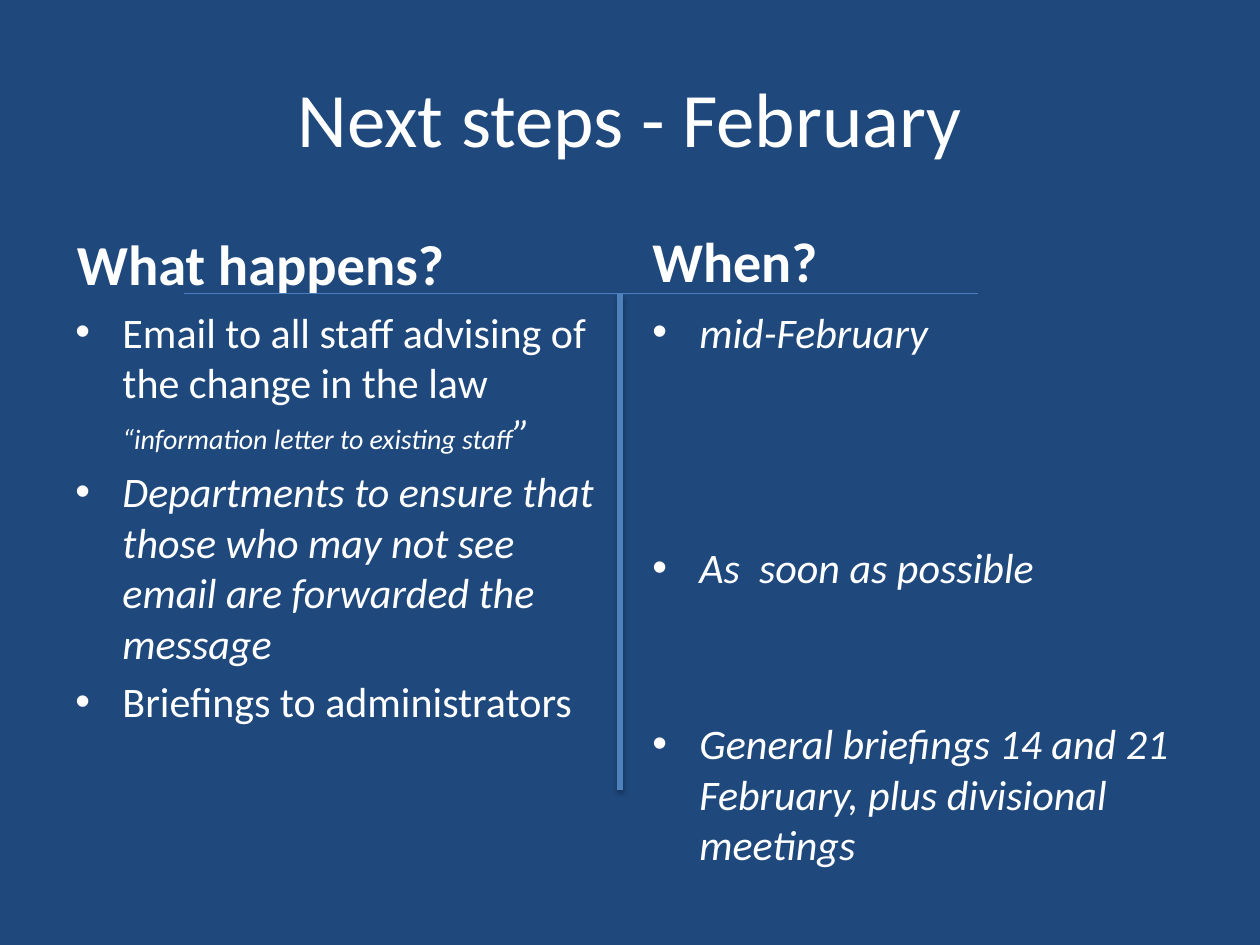
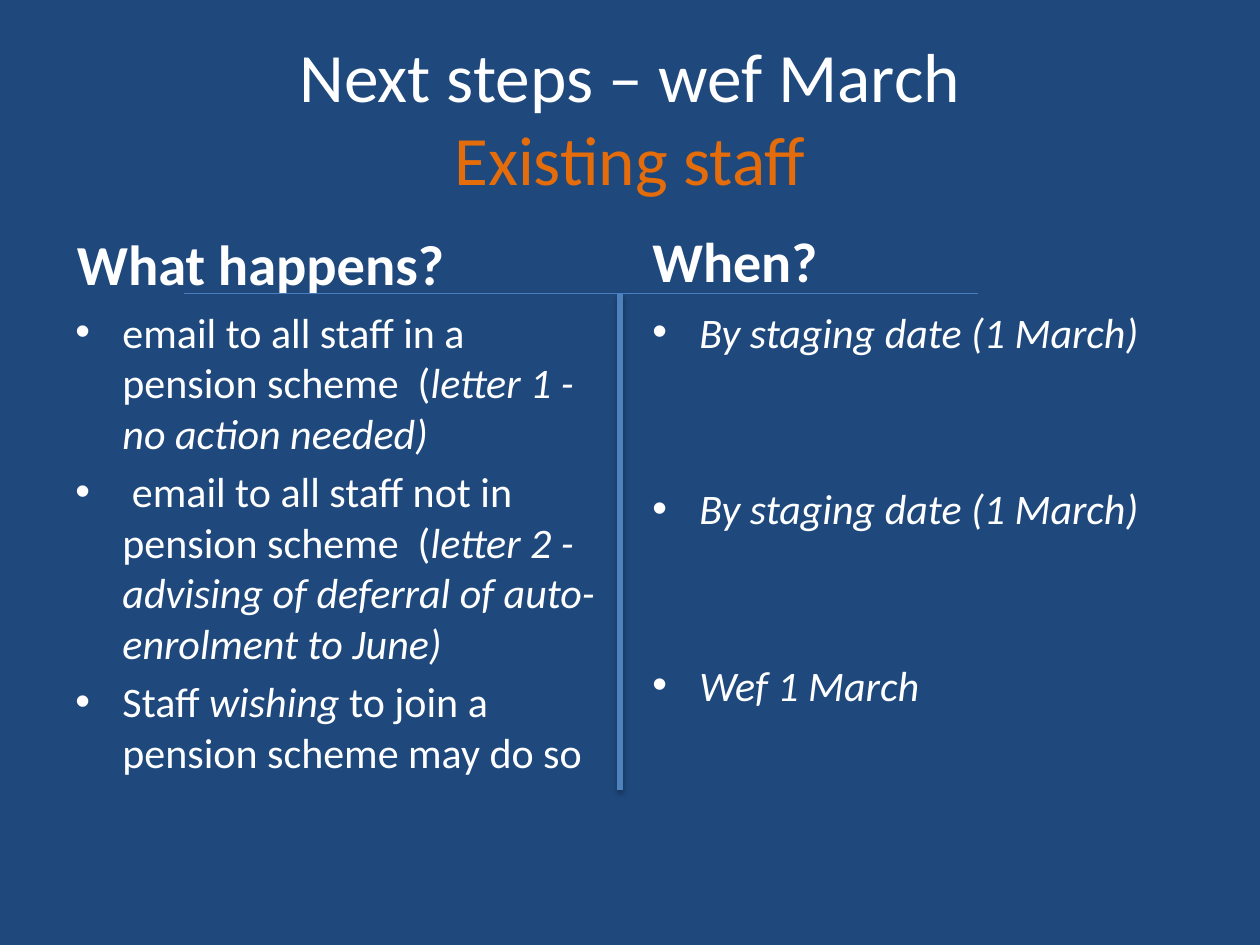
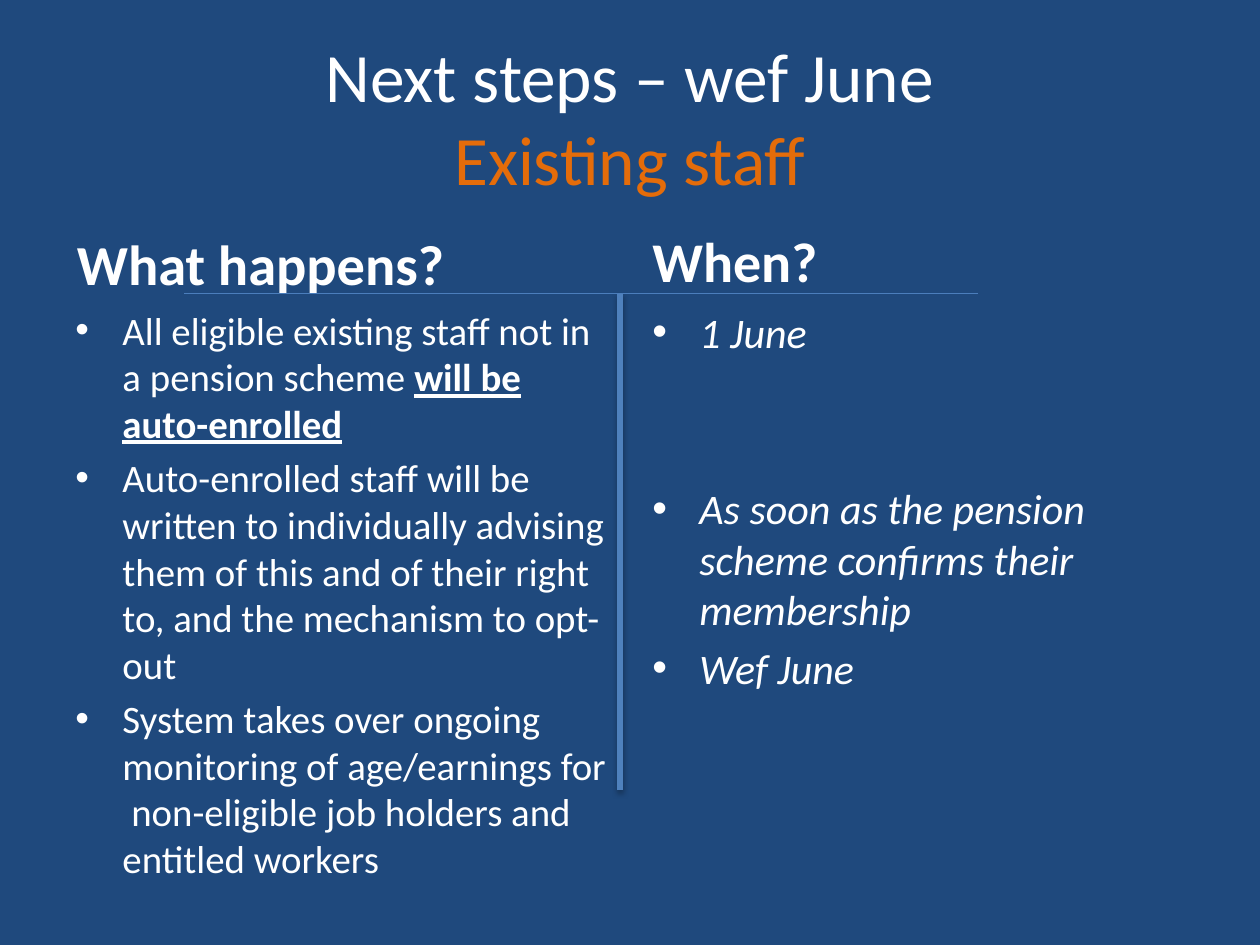
from dataclasses import dataclass

from lxml import etree
from pptx import Presentation
from pptx.dml.color import RGBColor
from pptx.enum.shapes import MSO_CONNECTOR as Connector
from pptx.enum.text import MSO_ANCHOR as Anchor, PP_ALIGN as Align
from pptx.oxml.ns import qn
from pptx.util import Cm, Pt

FONT = "Calibri"
NAVY, WHITE, ORANGE = "1F497D", "FFFFFF", "E46C0A"
DIVIDER_BLUE, RULE_BLUE = "4F81BD", "4B7EBC"
LEFT, RIGHT, COLUMN_WIDTH = 1.27, 12.9, 11.23
LIST_TOP, LIST_HEIGHT = 6.05, 10.97
RULE_TOP = 5.92
INDENT = Cm(0.95)
BODY_SIZE = 24
SPACING = 0.2  # space before a paragraph, as a share of the text size
LINE_HEIGHT = 1.2


@dataclass
class Run:
    text: str
    size: float = None
    color: str = WHITE
    bold: bool = False
    italic: bool = False
    underline: bool = False


@dataclass
class Item:
    """A list entry, set lower by a number of skipped lines."""
    runs: list
    skip: int = 0


def rgb(color):
    return RGBColor.from_string(color)


def add_run(paragraph, run, size):
    text_run = paragraph.add_run()
    text_run.text = run.text
    font = text_run.font
    font.name = FONT
    font.size = Pt(run.size or size)
    font.color.rgb = rgb(run.color)
    font.bold, font.italic, font.underline = run.bold, run.italic, run.underline


def add_text_frame(slide, left, top, width, height, anchor=Anchor.TOP):
    shape = slide.shapes.add_textbox(Cm(left), Cm(top), Cm(width), Cm(height))
    frame = shape.text_frame
    frame.word_wrap = True
    frame.vertical_anchor = anchor
    return frame


def add_title(slide, lines, size):
    frame = add_text_frame(slide, LEFT, 0.76, 22.86, 3.18, Anchor.MIDDLE)
    paragraph = frame.paragraphs[0]
    paragraph.alignment = Align.CENTER
    for index, line in enumerate(lines):
        if index:
            paragraph.add_line_break()
        add_run(paragraph, line, size)


def add_heading(slide, left, top, text, size):
    frame = add_text_frame(slide, left, top, COLUMN_WIDTH, 1.78, Anchor.BOTTOM)
    paragraph = frame.paragraphs[0]
    paragraph.space_before = Pt(SPACING * size)
    add_run(paragraph, Run(text, bold=True), size)


def add_bullet(paragraph):
    properties = paragraph._p.get_or_add_pPr()
    properties.set("marL", str(INDENT))
    properties.set("indent", str(-INDENT))
    etree.SubElement(properties, qn("a:buFont"), typeface="Arial")
    etree.SubElement(properties, qn("a:buChar"), char="•")


def add_list(slide, left, items, size=BODY_SIZE, height=LIST_HEIGHT):
    frame = add_text_frame(slide, left, LIST_TOP, COLUMN_WIDTH, height)
    for index, item in enumerate(items):
        paragraph = frame.add_paragraph() if index else frame.paragraphs[0]
        skipped = item.skip * (LINE_HEIGHT + SPACING)
        paragraph.space_before = Pt(size * (SPACING + skipped))
        add_bullet(paragraph)
        for run in item.runs:
            add_run(paragraph, run, size)


def add_line(slide, start, end, color, width, shadow=False):
    points = [Cm(value) for value in (*start, *end)]
    line = slide.shapes.add_connector(Connector.STRAIGHT, *points)
    line.line.color.rgb = rgb(color)
    line.line.width = Pt(width)
    effects = etree.SubElement(line._element.spPr, qn("a:effectLst"))
    if shadow:
        outer = etree.SubElement(effects, qn("a:outerShdw"), blurRad="40000",
                                 dist="23000", dir="5400000", rotWithShape="0")
        black = etree.SubElement(outer, qn("a:srgbClr"), val="000000")
        etree.SubElement(black, qn("a:alpha"), val="35000")


def add_steps_slide(presentation, title, title_size, happenings, dates,
                    size=BODY_SIZE, height=LIST_HEIGHT):
    slide = presentation.slides.add_slide(presentation.slide_layouts[6])
    slide.background.fill.solid()
    slide.background.fill.fore_color.rgb = rgb(NAVY)
    add_title(slide, title, title_size)
    add_heading(slide, 1.3, 4.32, "What happens?", 32.3)
    add_list(slide, LEFT, happenings, size, height)
    add_heading(slide, RIGHT, 4.27, "When?", 32)
    add_list(slide, RIGHT, dates)
    add_line(slide, (12.5, RULE_TOP), (12.5, 15.93), DIVIDER_BLUE, 3, shadow=True)
    add_line(slide, (3.71, RULE_TOP), (19.71, RULE_TOP), RULE_BLUE, 0.75)


def italic(text, size=None):
    return Run(text, size, italic=True)


def date(text, skip=0):
    return Item([italic(text)], skip)


def main():
    presentation = Presentation()
    presentation.slide_width, presentation.slide_height = Cm(25.4), Cm(19.05)
    existing_staff = Run("Existing staff", color=ORANGE)

    add_steps_slide(
        presentation, [Run("Next steps - February")], 44,
        [Item([Run("Email to all staff advising of the change in the law  "),
               italic("“information letter to existing staff", 16),
               italic("”")]),
         Item([italic("Departments to ensure that those who may not see "
                      "email are forwarded the message")]),
         Item([Run("Briefings to administrators")])],
        [date("mid-February"),
         date("As  soon as possible", skip=3),
         date("General briefings 14 and 21 February, plus divisional meetings",
              skip=2)])

    add_steps_slide(
        presentation, [Run("Next steps – wef March"), existing_staff], 39.6,
        [Item([Run("email to all staff in a pension scheme  ("),
               italic("letter 1 - no action needed)")]),
         Item([Run(" email to all staff not in pension scheme  ("),
               italic("letter 2 - advising of deferral of auto-enrolment "
                      "to June)")]),
         Item([Run("Staff "), italic("wishing"),
               Run(" to join a pension scheme may do so")])],
        [date("By staging date (1 March)"),
         date("By staging date (1 March)", skip=2),
         date("Wef 1 March", skip=2)])

    add_steps_slide(
        presentation, [Run("Next steps – wef June"), existing_staff], 39.6,
        [Item([Run("All eligible existing staff not in a pension scheme "),
               Run("will be auto-enrolled", bold=True, underline=True)]),
         Item([Run("Auto-enrolled staff will be written to individually "
                   "advising them of this and of their right to, and the "
                   "mechanism to opt-out")]),
         Item([Run("System takes over ongoing monitoring of age/earnings for  "
                   "non-eligible job holders and entitled workers")])],
        [date("1 June"),
         date("As soon as the pension scheme confirms their membership", skip=2),
         date("Wef June")],
        size=22.2, height=11.48)

    presentation.save("out.pptx")


if __name__ == "__main__":
    main()
